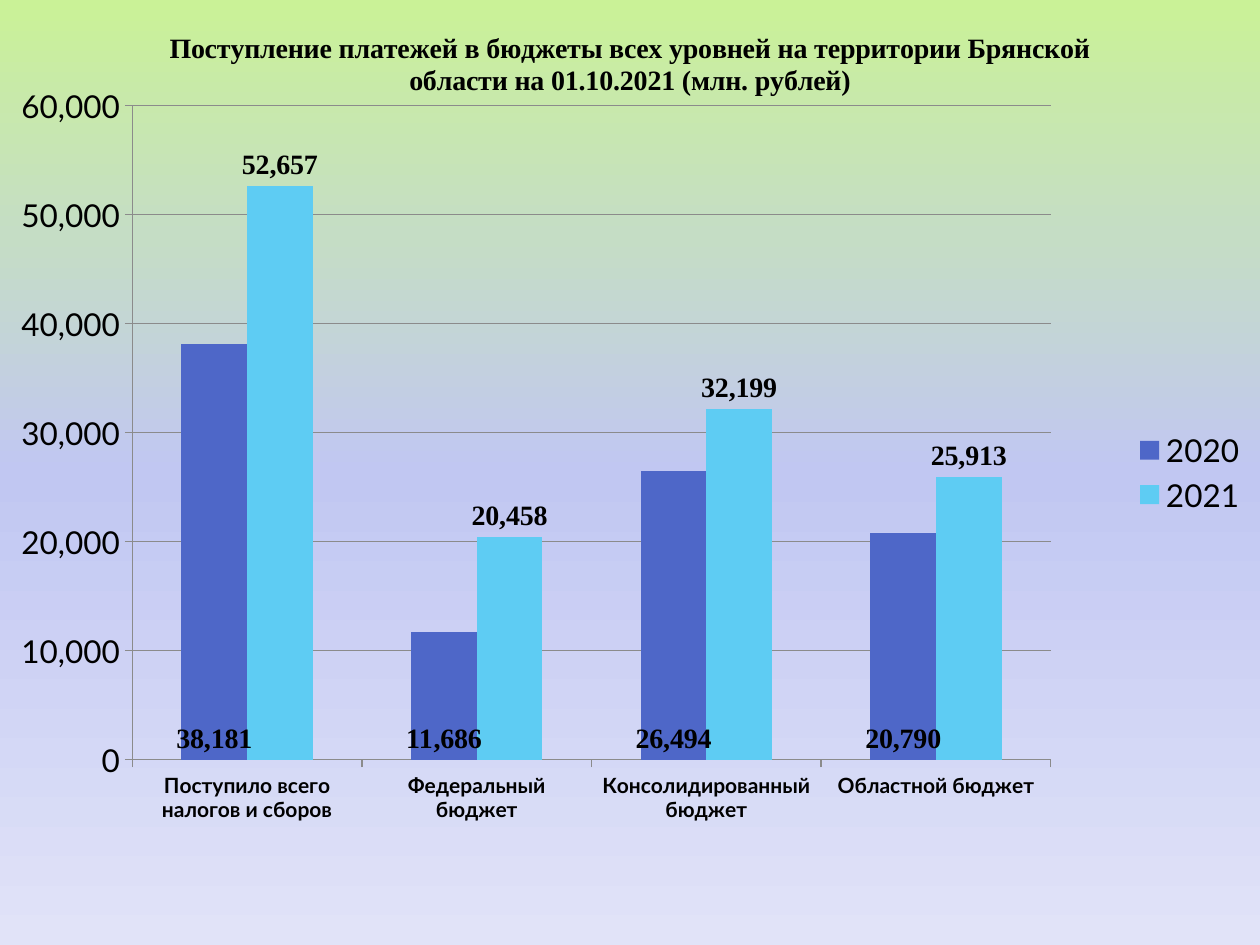
from lxml import etree
from pptx import Presentation
from pptx.chart.data import CategoryChartData
from pptx.dml.color import RGBColor
from pptx.enum import chart as kinds
from pptx.oxml import ns, parse_xml
from pptx.util import Pt

COLORS = {"text": "000000", "line": "8B8B8B", "2020": "4E67C8", "2021": "5ECCF3"}
BACKDROP = {0: "CAF297", 25: "C5DDC5", 50: "C1C7F2", 100: "E1E3F8"}
PLOT_AREA = {"x": 0.105, "y": 0.112, "w": 0.729, "h": 0.692}
SERIF = "Times New Roman"
NUMBER_FORMAT = "#,##0"


def style_font(font, size, name, bold):
    font.size, font.name, font.bold = Pt(size), name, bold
    font.color.rgb = RGBColor.from_string(COLORS["text"])


deck = Presentation()
deck.slide_width, deck.slide_height = Pt(720), Pt(540)
page = deck.slides.add_slide(deck.slide_layouts[6])

# Chart data
budgets = CategoryChartData(number_format=NUMBER_FORMAT)
budgets.categories = [
    "Поступило всего налогов и сборов",
    "Федеральный бюджет",
    "Консолидированный бюджет",
    "Областной бюджет",
]
budgets.add_series("2020", [38181, 11686, 26494, 20790])
budgets.add_series("2021", [52657, 20458, 32199, 25913])
chart = page.shapes.add_chart(
    kinds.XL_CHART_TYPE.COLUMN_CLUSTERED, 0, 0, Pt(720), Pt(540), budgets
).chart
style_font(chart.font, 18, "Lato", False)

# Title and legend
chart.has_title = True
para = chart.chart_title.text_frame.paragraphs[0]
para.text = (
    "Поступление платежей в бюджеты всех уровней на территории Брянской "
    "области на 01.10.2021 (млн. рублей)"
)
style_font(para.font, 16, SERIF, True)
chart.chart_title.include_in_layout = False
chart.has_legend = True
chart.legend.position = kinds.XL_LEGEND_POSITION.RIGHT
chart.legend.include_in_layout = False

# Axes
values, categories = chart.value_axis, chart.category_axis
values.minimum_scale, values.maximum_scale, values.major_unit = 0, 60000, 10000
values.has_major_gridlines = True
values.tick_labels.number_format = NUMBER_FORMAT
values.tick_labels.number_format_is_linked = False
style_font(categories.tick_labels.font, 12, "Lato", True)
for axis in (values, categories):
    axis.major_tick_mark = kinds.XL_TICK_MARK.OUTSIDE
for part in (values, categories, values.major_gridlines):
    part.format.line.color.rgb = RGBColor.from_string(COLORS["line"])
    part.format.line.width = Pt(0.75)

# Columns and their labels
plot = chart.plots[0]
plot.gap_width, plot.overlap, plot.vary_by_categories = 150, 0, False
positions = (
    kinds.XL_LABEL_POSITION.INSIDE_BASE,
    kinds.XL_LABEL_POSITION.OUTSIDE_END,
)
for series, position in zip(plot.series, positions):
    series.format.fill.solid()
    series.format.fill.fore_color.rgb = RGBColor.from_string(COLORS[series.name])
    labels = series.data_labels
    labels.show_value = True
    labels.position = position
    labels.number_format = NUMBER_FORMAT
    labels.number_format_is_linked = False
    style_font(labels.font, 16, SERIF, True)

# Fixed inner plot area
chart_root = chart.element.find(ns.qn("c:chart"))
plot_area = chart_root.find(ns.qn("c:plotArea"))
for old_layout in plot_area.findall(ns.qn("c:layout")):
    plot_area.remove(old_layout)
layout = etree.Element(ns.qn("c:layout"))
manual = etree.SubElement(layout, ns.qn("c:manualLayout"))
settings = {"layoutTarget": "inner", "xMode": "edge", "yMode": "edge", **PLOT_AREA}
for tag, value in settings.items():
    etree.SubElement(manual, ns.qn(f"c:{tag}"), val=str(value))
plot_area.insert(0, layout)

# Vertical gradient behind the whole chart
stops = "".join(
    f'<a:gs pos="{percent * 1000}"><a:srgbClr val="{color}"/></a:gs>'
    for percent, color in BACKDROP.items()
)
chart_root.addnext(parse_xml(
    f'<c:spPr {ns.nsdecls("c", "a")}><a:gradFill><a:gsLst>{stops}</a:gsLst>'
    '<a:lin ang="5400000" scaled="0"/></a:gradFill><a:ln><a:noFill/></a:ln></c:spPr>'
))

deck.save("out.pptx")
